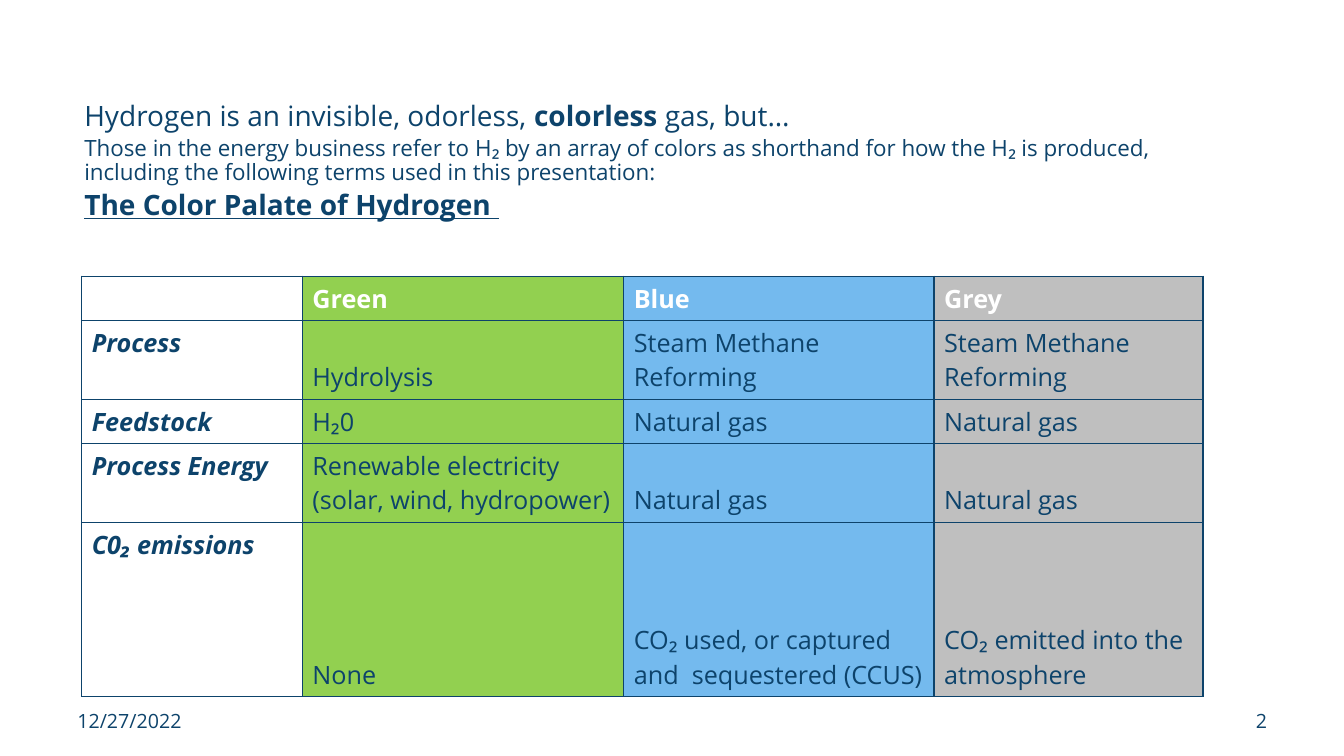
from lxml import etree
from pptx import Presentation
from pptx.dml.color import RGBColor
from pptx.enum.text import MSO_ANCHOR, MSO_AUTO_SIZE, PP_ALIGN
from pptx.oxml.ns import qn
from pptx.util import Cm, Pt

TOP, BOTTOM = MSO_ANCHOR.TOP, MSO_ANCHOR.BOTTOM
LEFT, RIGHT = PP_ALIGN.LEFT, PP_ALIGN.RIGHT
NO_AUTOFIT = MSO_AUTO_SIZE.NONE

NAVY = "0D436B"
WHITE = "FFFFFF"
COLUMN_FILLS = [WHITE, "92D050", "74BAEE", "BFBFBF"]
COLUMN_WIDTHS = [5.56, 8.1, 7.82, 6.78]
ROW_HEIGHTS = [1.09, 1.93, 1.09, 1.93, 4.39]
HYDROGEN_COLORS = [
    ["", "Green", "Blue", "Grey"],
    ["Process", "Hydrolysis", "Steam Methane Reforming", "Steam Methane Reforming"],
    ["Feedstock", "H₂0", "Natural gas", "Natural gas"],
    ["Process Energy", "Renewable electricity\n(solar, wind, hydropower)",
     "Natural gas", "Natural gas"],
    ["C0₂ emissions", "None", "CO₂ used, or captured and  sequestered (CCUS)",
     "CO₂ emitted into the atmosphere"],
]
INTRO = [
    (["Hydrogen is an invisible, odorless, ", "colorless", " gas, but…"], 20, 0),
    (["Those in the energy business refer to H₂ by an array of colors as shorthand "
      "for how the H₂ is produced, including the following terms used in this "
      "presentation:"], 16, 3.2),
    (["The Color Palate of Hydrogen "], 20, 4),
]


def rgb(value):
    return RGBColor.from_string(value)


class HydrogenSlide:
    font_name = "Open Sans"

    def __init__(self, presentation):
        self.slide = presentation.slides.add_slide(presentation.slide_layouts[1])
        title = self.slide.shapes.title
        title.element.getparent().remove(title.element)

    def style(self, font, size, color=NAVY, bold=None, italic=None):
        font.name = self.font_name
        font.size = Pt(size)
        font.color.rgb = rgb(color)
        font.bold = bold
        font.italic = italic

    def body(self, left, top, width, height, lines):
        intro = self.slide.placeholders[1]
        intro.left, intro.top = Cm(left), Cm(top)
        intro.width, intro.height = Cm(width), Cm(height)
        frame = intro.text_frame
        frame.word_wrap = True
        frame.auto_size = NO_AUTOFIT
        frame.vertical_anchor = TOP
        for index, (parts, size, space) in enumerate(lines):
            line = frame.add_paragraph() if index else frame.paragraphs[0]
            properties = line._p.get_or_add_pPr()
            properties.set("marL", str(Cm(0.3)))
            properties.set("indent", "0")
            etree.SubElement(properties, qn("a:buNone"))
            line.alignment = LEFT
            line.line_spacing = 0.9
            line.space_before = Pt(space)
            self.style(line.font, size)
            for part in parts:
                line.add_run().text = part
        lead, _, heading = frame.paragraphs
        lead.runs[1].font.bold = True
        heading.font.bold = True
        heading.font.underline = True

    def border(self, cell, color, width):
        properties = cell._tc.get_or_add_tcPr()
        for side in ("lnL", "lnR", "lnT", "lnB"):
            edge = etree.SubElement(properties, qn(f"a:{side}"), w=str(Pt(width)))
            fill = etree.SubElement(edge, qn("a:solidFill"))
            etree.SubElement(fill, qn("a:srgbClr"), val=color)

    def table(self, left, top, widths, heights, rows, fills):
        frame = self.slide.shapes.add_table(
            len(rows), len(widths), Cm(left), Cm(top),
            Cm(sum(widths)), Cm(sum(heights)))
        palette = frame.table
        palette.first_row = False
        palette.horz_banding = False
        for column, width in zip(palette.columns, widths):
            column.width = Cm(width)
        for row, height in zip(palette.rows, heights):
            row.height = Cm(height)
        for r, texts in enumerate(rows):
            for c, (text, fill) in enumerate(zip(texts, fills)):
                cell = palette.cell(r, c)
                self.border(cell, NAVY, 1)
                cell.fill.solid()
                cell.fill.fore_color.rgb = rgb(fill)
                cell.vertical_anchor = BOTTOM if r and c else TOP
                cell.text = text
                for paragraph in cell.text_frame.paragraphs:
                    self.style(paragraph.font, 18, NAVY if r else WHITE,
                               bold=r == 0 or c == 0, italic=r > 0 and c == 0)

    def footer(self, left, text, alignment):
        box = self.slide.shapes.add_textbox(Cm(left), Cm(17.73), Cm(7.9), Cm(1.32))
        box.text_frame.word_wrap = True
        paragraph = box.text_frame.paragraphs[0]
        paragraph.text = text
        paragraph.alignment = alignment
        self.style(paragraph.font, 14)


def main():
    presentation = Presentation()
    presentation.slide_width = Cm(33.87)
    presentation.slide_height = Cm(19.05)
    page = HydrogenSlide(presentation)
    page.body(1.57, 2.46, 29.21, 0.94, INTRO)
    page.table(2.06, 6.96, COLUMN_WIDTHS, ROW_HEIGHTS, HYDROGEN_COLORS, COLUMN_FILLS)
    page.footer(1.7, "12/27/2022", LEFT)
    page.footer(24.28, "2", RIGHT)
    presentation.save("out.pptx")


if __name__ == "__main__":
    main()
